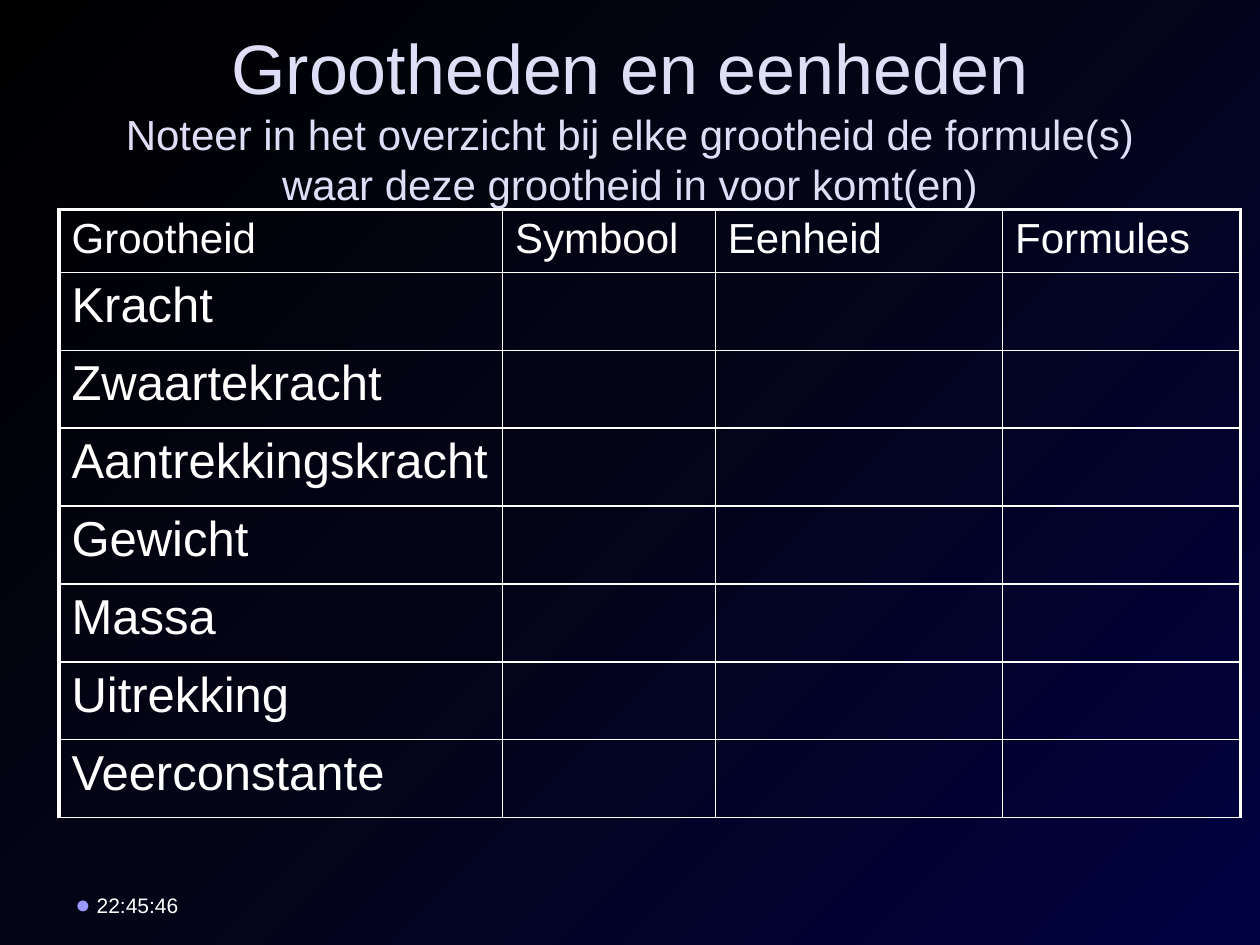
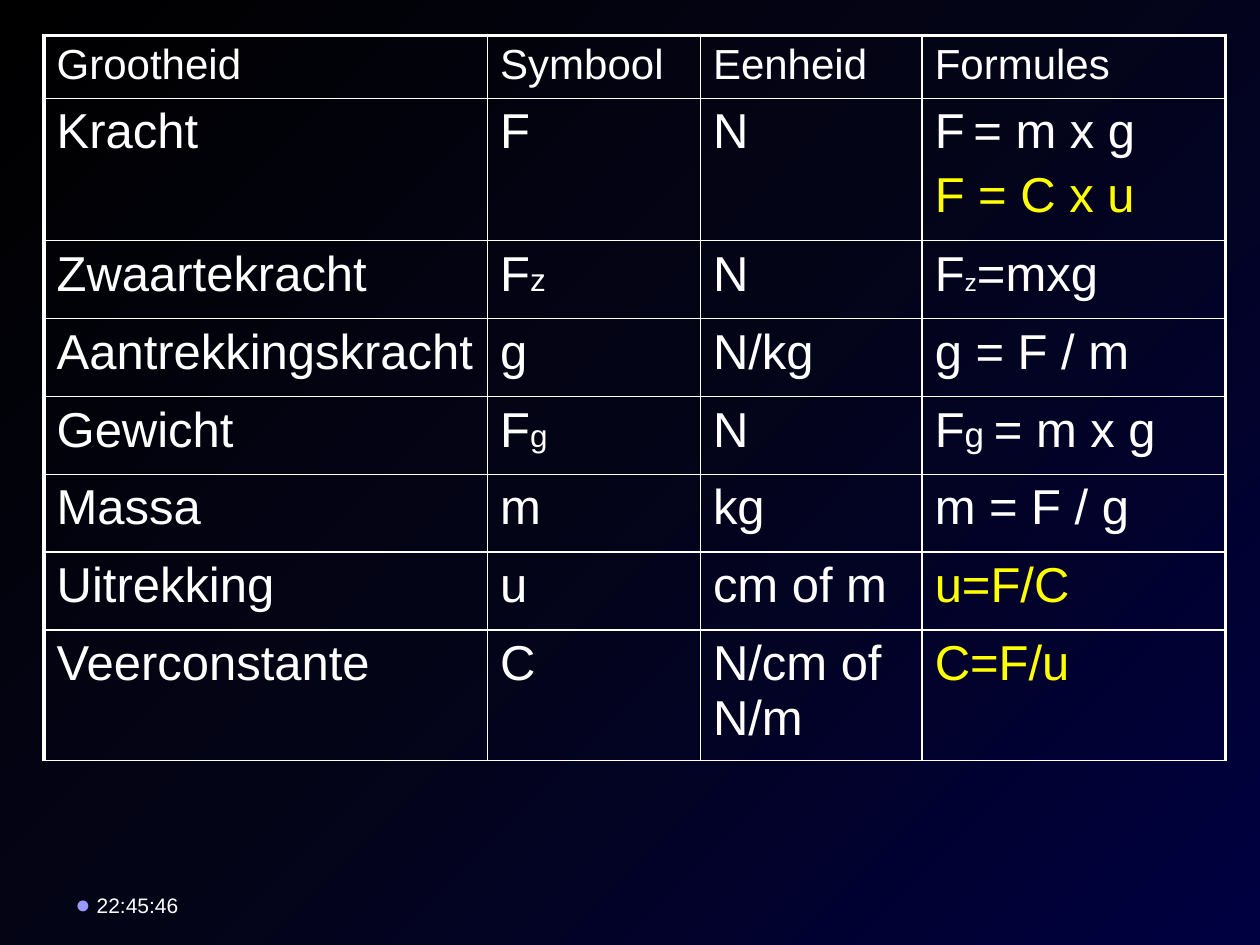
import copy
import dataclasses
import pptx
import pptx.dml.color
import pptx.enum.text
import pptx.oxml
import pptx.oxml.ns
import pptx.util

Cm = pptx.util.Cm
Pt = pptx.util.Pt
RGBColor = pptx.dml.color.RGBColor
Anchor = pptx.enum.text.MSO_ANCHOR

BLACK = RGBColor(0x00, 0x00, 0x00)
NIGHT = RGBColor(0x04, 0x04, 0x17)
NAVY = RGBColor(0x00, 0x00, 0x40)
WHITE = RGBColor(0xFF, 0xFF, 0xFF)
LILAC = RGBColor(0xDF, 0xDE, 0xF6)
YELLOW = RGBColor(0xFF, 0xFF, 0x00)
VIOLET = RGBColor(0x99, 0x99, 0xFF)

FONT = "Arial"
THICK, THIN = 2.25, 1
HEAD_SIZE, BODY_SIZE = 24, 28
HEAD_ROW, BODY_ROW = 1.27, 1.57

HEADS = ["Grootheid", "Symbool", "Eenheid", "Formules"]
NAMES = ["Kracht", "Zwaartekracht", "Aantrekkingskracht", "Gewicht",
         "Massa", "Uitrekking", "Veerconstante"]


@dataclasses.dataclass
class Bit:
    text: str
    size: float = BODY_SIZE
    hue: RGBColor = WHITE


ANSWERS = [
    ["F", "N", [[Bit("F"), Bit(" ", 18), Bit("= m x g")],
                [Bit("F = C x u", hue=YELLOW)]]],
    [[[Bit("F"), Bit("z", 18)]], "N", [[Bit("F"), Bit("z", 14), Bit("=mxg")]]],
    ["g", "N/kg", "g = F / m"],
    [[[Bit("F"), Bit("g", 18)]], "N", [[Bit("F"), Bit("g ", 20), Bit("= m x g")]]],
    ["m", "kg", "m = F / g"],
    ["u", "cm of m", [[Bit("u=F/C", hue=YELLOW)]]],
    ["C", "N/cm of N/m", [[Bit("C=F/u", hue=YELLOW)]]],
]


def make(tag, inner="", **attrs):
    pairs = "".join(f' {key}="{value}"' for key, value in attrs.items())
    space = pptx.oxml.ns.nsdecls("a")
    return pptx.oxml.parse_xml(f"<a:{tag} {space}{pairs}>{inner}</a:{tag}>")


class Deck:
    def __init__(self):
        self.show = pptx.Presentation()
        self.show.slide_width = Cm(25.4)
        self.show.slide_height = Cm(19.05)
        self.slide = None
        self.paint()

    def paint(self):
        fill = self.show.slide_master.background.fill
        fill.gradient()
        fill.gradient_angle = 315
        first, last = fill.gradient_stops
        first.position, first.color.rgb = 0, NIGHT
        last.position, last.color.rgb = 1, NAVY
        stops = self.show.slide_master.element.xpath(".//p:bg//a:gsLst")[0]
        stops.insert(0, copy.deepcopy(stops[0]))
        start, middle = list(fill.gradient_stops)[:2]
        start.color.rgb = BLACK
        middle.position = 0.47

    def style(self, run, size, hue):
        run.font.name = FONT
        run.font.size = Pt(size)
        run.font.color.rgb = hue

    def start(self, layout):
        self.slide = self.show.slides.add_slide(self.show.slide_layouts[layout])
        self.clock()

    def clock(self):
        box = self.slide.shapes.add_textbox(Cm(1.27), Cm(17.35), Cm(5.92), Cm(1.27))
        frame = box.text_frame
        frame.word_wrap = True
        frame.vertical_anchor = Anchor.BOTTOM
        frame.text = "22:45:46"
        line = frame.paragraphs[0]
        props = line._p.get_or_add_pPr()
        props.set("marL", str(Cm(0.43)))
        props.set("indent", str(-Cm(0.43)))
        props.append(make("buClr", f'<a:srgbClr val="{VIOLET}"/>'))
        props.append(make("buSzPct", val=120000))
        props.append(make("buFont", typeface=FONT))
        props.append(make("buChar", char="●"))
        self.style(line.runs[0], 12, WHITE)

    def title(self, head, task):
        shape = self.slide.shapes.title
        shape.left, shape.top = Cm(1.27), Cm(0.76)
        shape.width, shape.height = Cm(22.86), Cm(3.18)
        frame = shape.text_frame
        frame.word_wrap = True
        frame.auto_size = pptx.enum.text.MSO_AUTO_SIZE.NONE
        frame.vertical_anchor = Anchor.MIDDLE
        frame.text = f"{head}\v{task}"
        line = frame.paragraphs[0]
        line.alignment = pptx.enum.text.PP_ALIGN.CENTER
        for run, size in zip(line.runs, (40, 24)):
            self.style(run, size, LILAC)

    def table(self, left, top, widths, heights, rows):
        frame = self.slide.shapes.add_table(
            len(rows), len(widths), Cm(left), Cm(top),
            Cm(sum(widths)), Cm(sum(heights)))
        grid = frame.table
        grid.first_row = grid.horz_banding = False
        for col, width in zip(grid.columns, widths):
            col.width = Cm(width)
        for row, height in zip(grid.rows, heights):
            row.height = Cm(height)
        end = len(widths) - 1
        for y, row in enumerate(rows):
            for x, value in enumerate(row):
                cell = grid.cell(y, x)
                self.put(cell, value, BODY_SIZE if y else HEAD_SIZE)
                cell.fill.background()
                self.edge(cell, L=THIN if x else THICK,
                          R=THICK if x == end else THIN,
                          T=THIN if y else THICK, B=THIN)

    def put(self, cell, value, size):
        lines = [[Bit(value, size)]] if isinstance(value, str) else value
        frame = cell.text_frame
        for place, bits in enumerate(lines):
            line = frame.add_paragraph() if place else frame.paragraphs[0]
            if place:
                line.space_before = Pt(5)
            for bit in bits:
                run = line.add_run()
                run.text = bit.text
                self.style(run, bit.size, bit.hue)

    def edge(self, cell, **sides):
        props = cell._tc.get_or_add_tcPr()
        paint = f'<a:solidFill><a:srgbClr val="{WHITE}"/></a:solidFill>'
        for place, (side, width) in enumerate(sides.items()):
            props.insert(place, make(f"ln{side}", paint, w=Pt(width)))


def main():
    deck = Deck()

    deck.start(5)
    deck.title("Grootheden en eenheden",
               "Noteer in het overzicht bij elke grootheid de formule(s) "
               "waar deze grootheid in voor komt(en)")
    deck.table(1.19, 4.22, [8.94, 4.29, 5.79, 4.8],
               [HEAD_ROW] + [BODY_ROW] * len(NAMES),
               [HEADS] + [[name, "", "", ""] for name in NAMES])

    deck.start(6)
    deck.table(0.89, 0.71, [8.94, 4.29, 4.47, 6.12],
               [HEAD_ROW, 2.87] + [BODY_ROW] * 5 + [2.62],
               [HEADS] + [[name, *cells] for name, cells in zip(NAMES, ANSWERS)])

    deck.show.save("out.pptx")


if __name__ == "__main__":
    main()
